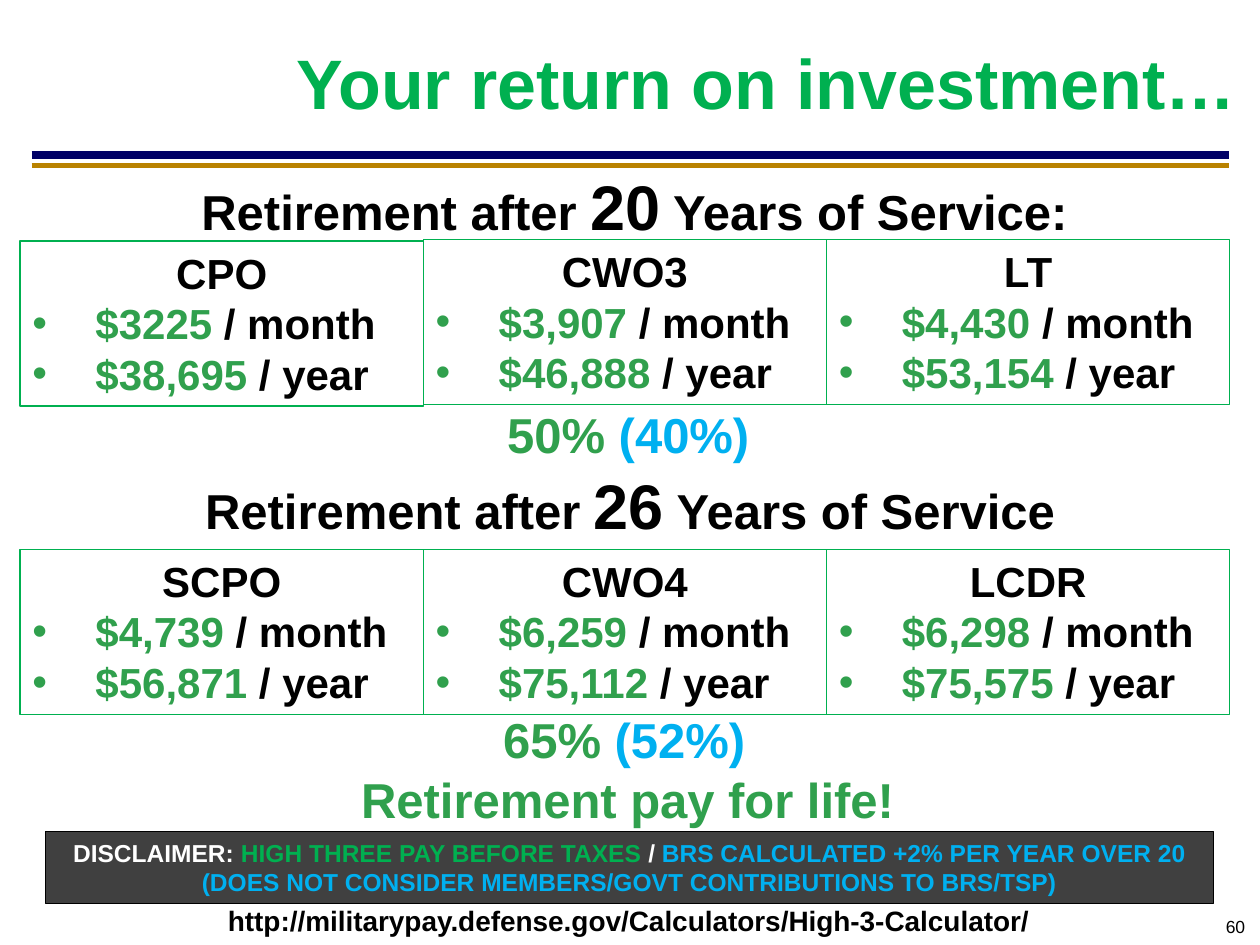
from pptx import Presentation
from pptx.util import Pt
from pptx.dml.color import RGBColor as Rgb
from pptx.enum.shapes import MSO_SHAPE as Shape, MSO_CONNECTOR as Conn
from pptx.enum.text import PP_ALIGN as Align, MSO_ANCHOR as Anchor
from pptx.oxml.ns import qn
from lxml.etree import SubElement as Sub

BLACK = Rgb(0x00, 0x00, 0x00)
WHITE = Rgb(0xFF, 0xFF, 0xFF)
NAVY = Rgb(0x00, 0x00, 0x66)
GOLD = Rgb(0xB9, 0x82, 0x00)
GREEN = Rgb(0x00, 0xB0, 0x50)
LEAF = Rgb(0x30, 0xA0, 0x4D)
BLUE = Rgb(0x00, 0xB0, 0xF0)
GREY = Rgb(0x40, 0x40, 0x40)

LEFT, WIDE, HIGH = 11.5, 230.4, 94.3
EARLY = [("CPO", "$3225", "$38,695", 137.8),
         ("CWO3", "$3,907", "$46,888", 136.8),
         ("LT", "$4,430", "$53,154", 136.8)]
LATE = [("SCPO", "$4,739", "$56,871", 313.9),
        ("CWO4", "$6,259", "$75,112", 313.9),
        ("LCDR", "$6,298", "$75,575", 313.9)]


def write(par, runs, size=28, color=BLACK, bold=True, align=Align.CENTER,
          space=None, bullet=False):
    par.alignment = align
    par.line_spacing = space
    if bullet:
        props = par._p.get_or_add_pPr()
        props.set("marL", str(Pt(36)))
        props.set("indent", str(-Pt(36)))
        Sub(props, qn("a:buFont")).set("typeface", "Arial")
        Sub(props, qn("a:buChar")).set("char", "•")
    for text, *style in runs:
        look = {"size": size, "color": color, **(style[0] if style else {})}
        run = par.add_run()
        run.text = text
        font = run.font
        font.name = "Arial"
        font.size = Pt(look["size"])
        font.bold = bold
        font.color.rgb = look["color"]


def label(slide, box, runs, wrap=True, anchor=Anchor.TOP, **style):
    frame = slide.shapes.add_textbox(*map(Pt, box)).text_frame
    frame.word_wrap = wrap
    frame.vertical_anchor = anchor
    write(frame.paragraphs[0], runs, **style)


def panel(slide, box, line, fill=None):
    shape = slide.shapes.add_shape(Shape.RECTANGLE, *map(Pt, box))
    shape.shadow.inherit = False
    if fill is None:
        shape.fill.background()
    else:
        shape.fill.solid()
        shape.fill.fore_color.rgb = fill
    shape.line.color.rgb = line
    shape.line.width = Pt(0.75)
    frame = shape.text_frame
    frame.word_wrap = True
    frame.vertical_anchor = Anchor.TOP
    return frame


def rule(slide, y, color, width):
    line = slide.shapes.add_connector(
        Conn.STRAIGHT, Pt(18), Pt(y), Pt(702), Pt(y))
    line.line.color.rgb = color
    line.line.width = Pt(width)
    Sub(line._element.spPr, qn("a:effectLst"))


def ranks(slide, cards):
    for col, (rank, month, year, top) in enumerate(cards):
        frame = panel(slide, (LEFT + col * WIDE, top, WIDE, HIGH), GREEN)
        write(frame.paragraphs[0], [(rank,)], size=24)
        for pay, term in ((month, "month"), (year, "year")):
            write(frame.add_paragraph(),
                  [(pay + " ", {"color": LEAF}), ("/ " + term,)],
                  size=24, align=Align.LEFT, bullet=True)


def head(slide, box, years, end):
    label(slide, box, [("Retirement after ",), (years, {"size": 36}),
                       (" Years of Service" + end,)])


def share(slide, box, full, part):
    label(slide, box, [(full + " ",), (part, {"color": BLUE})],
          color=LEAF, wrap=False)


def main():
    deck = Presentation()
    deck.slide_width, deck.slide_height = Pt(720), Pt(540)
    slide = deck.slides.add_slide(deck.slide_layouts[6])

    rule(slide, 88.5, NAVY, 4.5)
    rule(slide, 94.5, GOLD, 2.75)
    label(slide, (72, 24.5, 648, 49.7),
          [("Your return on investment…",), (" ", {"size": 24})],
          size=40, color=GREEN, align=Align.RIGHT, space=0.85,
          anchor=Anchor.BOTTOM)

    head(slide, (100, 92.2, 525, 51), "20", ":")
    ranks(slide, EARLY)
    share(slide, (281.5, 227.5, 155, 41), "50%", "(40%)")

    head(slide, (100, 262.8, 520, 51), "26", "")
    ranks(slide, LATE)
    share(slide, (270.7, 401.8, 172, 41), "65%", "(52%)")

    label(slide, (197.3, 436.3, 322.6, 41), [("Retirement pay for life!",)],
          color=LEAF, wrap=False)
    note = panel(slide, (26, 475.2, 667.5, 41), BLACK, GREY)
    write(note.paragraphs[0],
          [("DISCLAIMER: ",),
           ("HIGH THREE PAY BEFORE TAXES ", {"color": GREEN}),
           ("/ ",),
           ("BRS CALCULATED +2% PER YEAR OVER 20 (DOES NOT CONSIDER "
            "MEMBERS/GOVT CONTRIBUTIONS TO BRS/TSP)", {"color": BLUE})],
          size=14, color=WHITE)
    label(slide, (22.3, 512.6, 674, 26.6),
          [("http://militarypay.defense.gov/Calculators/High-3-Calculator/",)],
          size=16)
    label(slide, (666, 519.8, 52.6, 20.2), [("60",)],
          size=10, bold=False, align=Align.RIGHT)
    deck.save("out.pptx")


if __name__ == "__main__":
    main()
